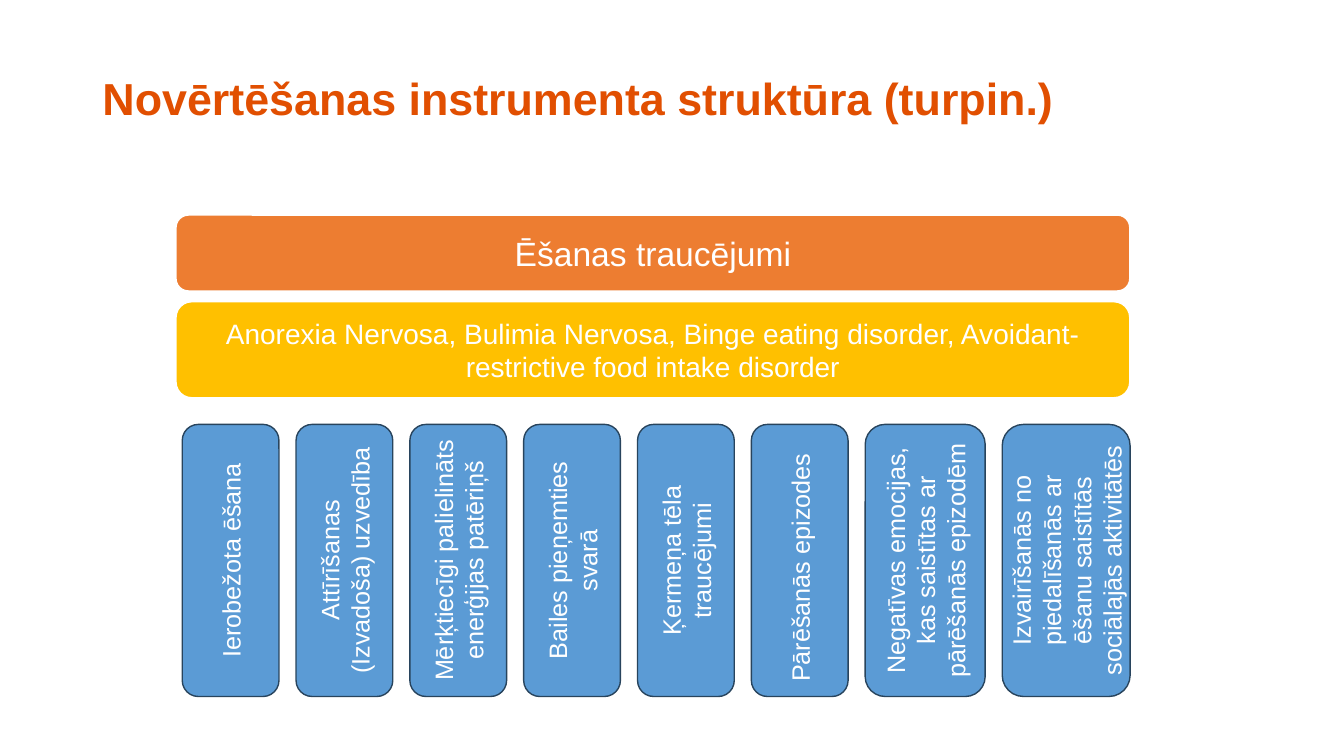
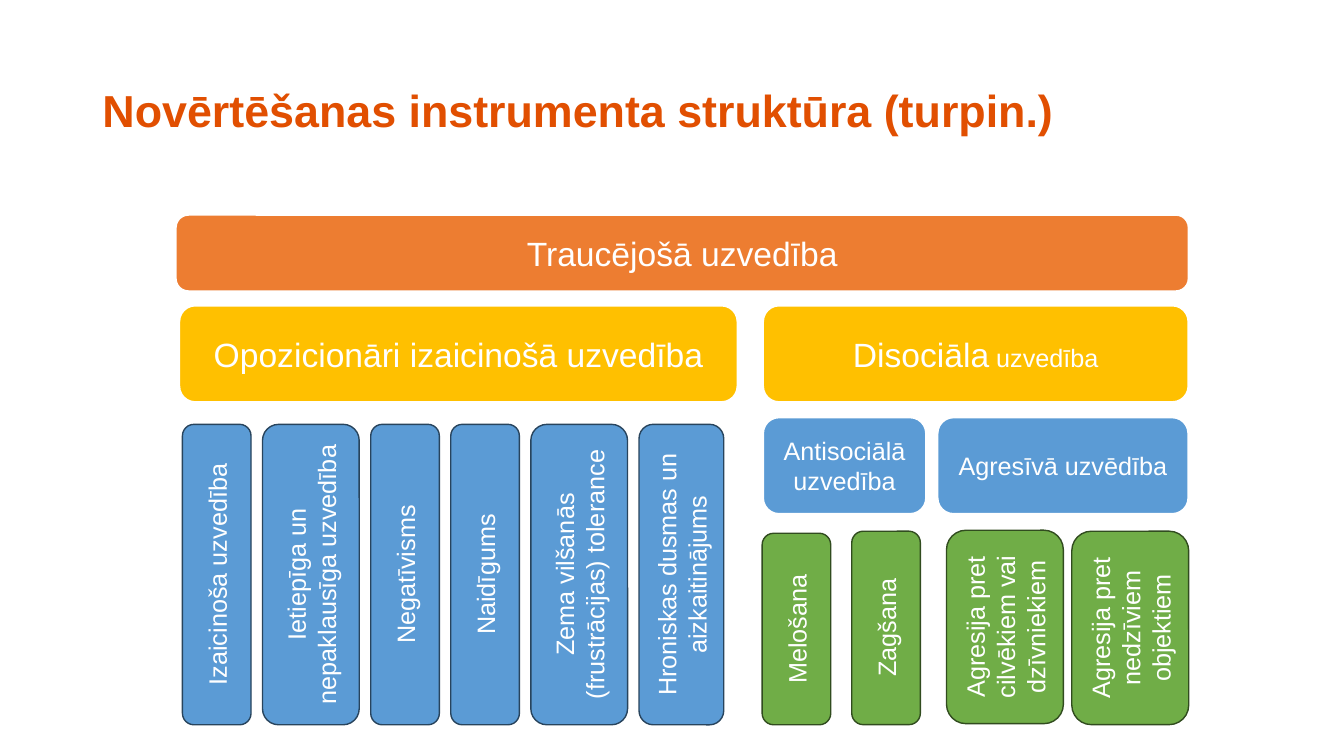
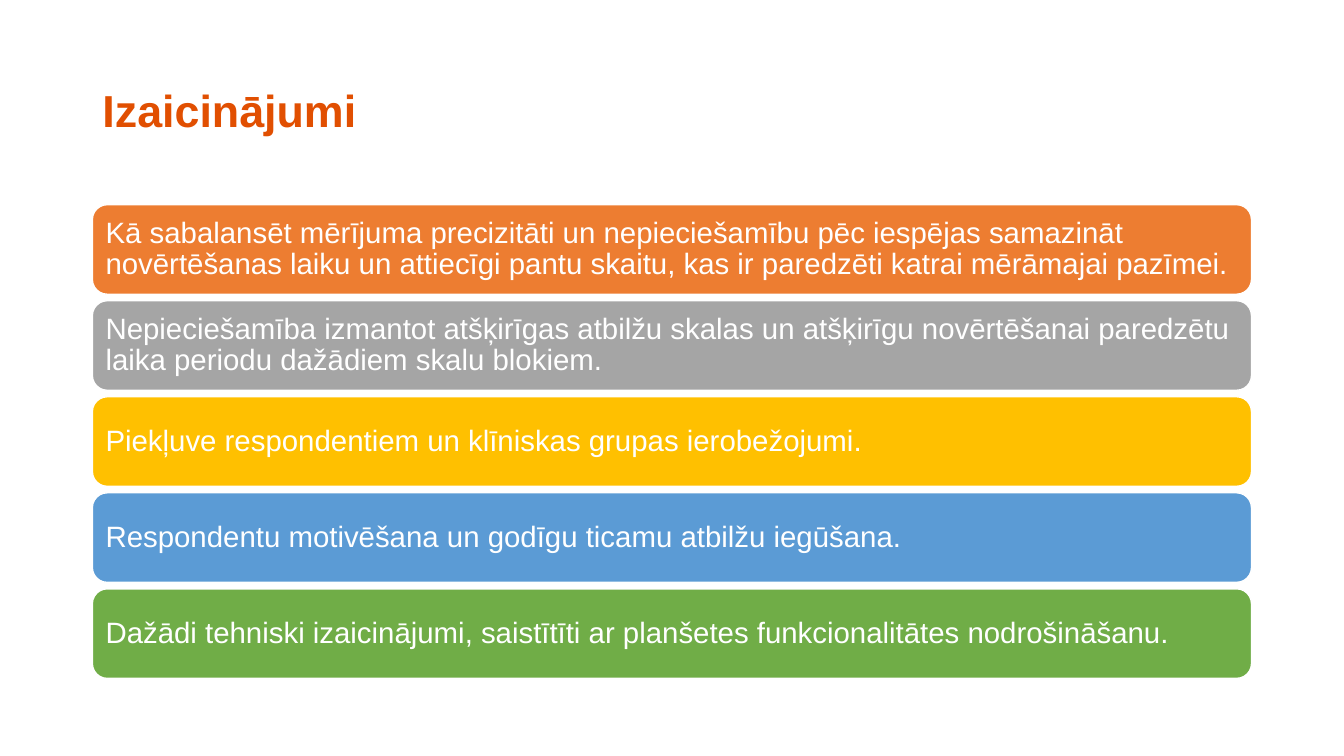
from pptx import Presentation
from pptx.dml.color import RGBColor
from pptx.enum.shapes import MSO_SHAPE
from pptx.enum.text import MSO_ANCHOR, MSO_AUTO_SIZE, PP_ALIGN
from pptx.util import Pt

COLORS = {
    "title": "E14F01",
    "white": "FFFFFF",
    "orange": "ED7D31",
    "gray": "A5A5A5",
    "yellow": "FFC000",
    "blue": "5B9BD5",
    "green": "70AD47",
    "blue_edge": "28445D",
    "green_edge": "314C1F",
}
FONT = "Arial"


def color(name):
    """Return the palette colour with this name."""
    return RGBColor.from_string(COLORS[name])


def write(p, text, size=18, fill="white", bold=False, align=PP_ALIGN.CENTER, spacing=None):
    """Add a formatted run to a paragraph."""
    p.alignment = align
    if spacing:
        p.line_spacing = spacing
    r = p.add_run()
    r.text = text
    r.font.name = FONT
    r.font.size = Pt(size)
    r.font.bold = bold
    r.font.color.rgb = color(fill)


class Deck:
    """Hold the presentation, its style and the current slide."""

    def __init__(self):
        """Start a widescreen presentation."""
        self.prs = Presentation()
        self.prs.slide_width, self.prs.slide_height = Pt(960), Pt(540)
        self.slide = None

    def add_slide(self, text, width=696, height=104.4):
        """Add a slide with the shared title style."""
        self.slide = self.prs.slides.add_slide(self.prs.slide_layouts[5])
        sp = self.slide.shapes.title
        sp.left, sp.top, sp.width, sp.height = Pt(66), Pt(28.8), Pt(width), Pt(height)
        tf = sp.text_frame
        tf.word_wrap = True
        tf.auto_size = MSO_AUTO_SIZE.NONE
        tf.vertical_anchor = MSO_ANCHOR.MIDDLE
        write(tf.paragraphs[0], text, size=32, fill="title", bold=True,
              align=PP_ALIGN.LEFT, spacing=0.9)

    def box(self, left, top, width, height, text, fill, edge="white", weight=1.5, **style):
        """Add a rounded box with centred text."""
        sp = self.slide.shapes.add_shape(
            MSO_SHAPE.ROUNDED_RECTANGLE, Pt(left), Pt(top), Pt(width), Pt(height))
        sp.shadow.inherit = False
        sp.fill.solid()
        sp.fill.fore_color.rgb = color(fill)
        sp.line.color.rgb = color(edge)
        sp.line.width = Pt(weight)
        tf = sp.text_frame
        tf.word_wrap = True
        tf.vertical_anchor = MSO_ANCHOR.MIDDLE
        write(tf.paragraphs[0], text, **style)
        return sp

    def pillar(self, left, top, width, height, text, fill="blue", **style):
        """Add an upright box whose text reads upwards."""
        shift = (height - width) / 2
        sp = self.box(left - shift, top + shift, height, width, text, fill,
                      edge=fill + "_edge", weight=1, **style)
        sp.rotation = 270

    def pillar_row(self, left, top, height, gap, items):
        """Add pillars side by side with equal gaps."""
        for width, text, align in items:
            self.pillar(left, top, width, height, text, align=align)
            left += width + gap


def eating_disorders(deck):
    """Build the slide on eating disorders."""
    deck.add_slide("Novērtēšanas instrumenta struktūra (turpin.)", height=87.1)
    deck.box(125.5, 153.4, 681.8, 54.7, "Ēšanas traucējumi", "orange", size=24)
    deck.box(125.5, 215.3, 681.8, 69.1,
             "Anorexia Nervosa, Bulimia Nervosa, Binge eating disorder, "
             "Avoidant-restrictive food intake disorder", "yellow", size=20)
    center, left = PP_ALIGN.CENTER, PP_ALIGN.LEFT
    deck.pillar_row(130.2, 303.1, 194.4, 12.2, [
        (69.1, "Ierobežota ēšana", center),
        (69.1, "Attīrīšanas (Izvadoša) uzvedība", center),
        (69.1, "Mērķtiecīgi palielināts enerģijas patēriņš", center),
        (69.1, "Bailes pieņemties svarā", center),
        (69.1, "Ķermeņa tēla traucējumi", center),
        (69.1, "Pārēšanās epizodes", left),
        (85.7, "Negatīvas emocijas, kas saistītas ar pārēšanās epizodēm", center),
        (91.4, "Izvairīšanās no piedalīšanās ar ēšanu saistītās "
               "sociālajās aktivitātēs", center),
    ])


def disruptive_behaviour(deck):
    """Build the slide on disruptive behaviour."""
    deck.add_slide("Novērtēšanas instrumenta struktūra (turpin.)")
    deck.box(125.5, 153.4, 723.6, 54.7, "Traucējošā uzvedība", "orange", size=24)
    deck.box(128, 218.2, 398.9, 69.1, "Opozicionāri izaicinošā uzvedība", "yellow", size=24)
    sp = deck.box(545, 218.2, 304, 69.1, "Disociāla", "yellow", size=24)
    write(sp.text_frame.paragraphs[0], " uzvedība")
    deck.box(545, 298.1, 116.6, 69.1, "Antisociālā uzvedība", "blue")
    deck.box(669.6, 298.1, 179.3, 69.1, "Agresīvā uzvēdība", "blue")
    center = PP_ALIGN.CENTER
    deck.pillar_row(130.3, 303.1, 214.6, 8.2, [
        (49, "Izaicinoša uzvedība", center),
        (69.1, "Ietiepīga un nepaklausīga uzvedība", center),
        (49, "Negatīvisms", center),
        (49, "Naidīgums", center),
        (69.1, "Zema vilšanās (frustrācijas) tolerance", center),
        (60.5, "Hroniskas dusmas un aizkaitinājums", center),
    ])
    for left, top, width, height, text in [
        (544.4, 380.9, 49, 136.8, "Melošana"),
        (608.4, 379.4, 49, 138.2, "Zagšana"),
        (676.1, 378.7, 83.5, 138.2, "Agresija pret cilvēkiem vai dzīvniekiem"),
        (765.6, 379.4, 83.5, 138.2, "Agresija pret nedzīviem objektiem"),
    ]:
        deck.pillar(left, top, width, height, text, fill="green")


def challenges(deck):
    """Build the slide on challenges."""
    deck.add_slide("Izaicinājumi", width=828)
    for i, (fill, text) in enumerate([
        ("orange", "Kā sabalansēt mērījuma precizitāti un nepieciešamību pēc iespējas "
                   "samazināt novērtēšanas laiku un attiecīgi pantu skaitu, kas ir "
                   "paredzēti katrai mērāmajai pazīmei."),
        ("gray", "Nepieciešamība izmantot atšķirīgas atbilžu skalas un atšķirīgu "
                 "novērtēšanai paredzētu laika periodu dažādiem skalu blokiem."),
        ("yellow", "Piekļuve respondentiem un klīniskas grupas ierobežojumi."),
        ("blue", "Respondentu motivēšana un godīgu ticamu atbilžu iegūšana."),
        ("green", "Dažādi tehniski izaicinājumi, saistītīti ar planšetes "
                  "funkcionalitātes nodrošināšanu."),
    ]):
        sp = deck.box(66, 146.2 + i * 68.6, 828, 64, text, fill, weight=1,
                      size=21, align=PP_ALIGN.LEFT, spacing=0.9)
        tf = sp.text_frame
        tf.margin_left = tf.margin_right = tf.margin_top = tf.margin_bottom = Pt(6.3)


def main():
    """Build and save the slides."""
    deck = Deck()
    eating_disorders(deck)
    disruptive_behaviour(deck)
    challenges(deck)
    deck.prs.save("out.pptx")


if __name__ == "__main__":
    main()
